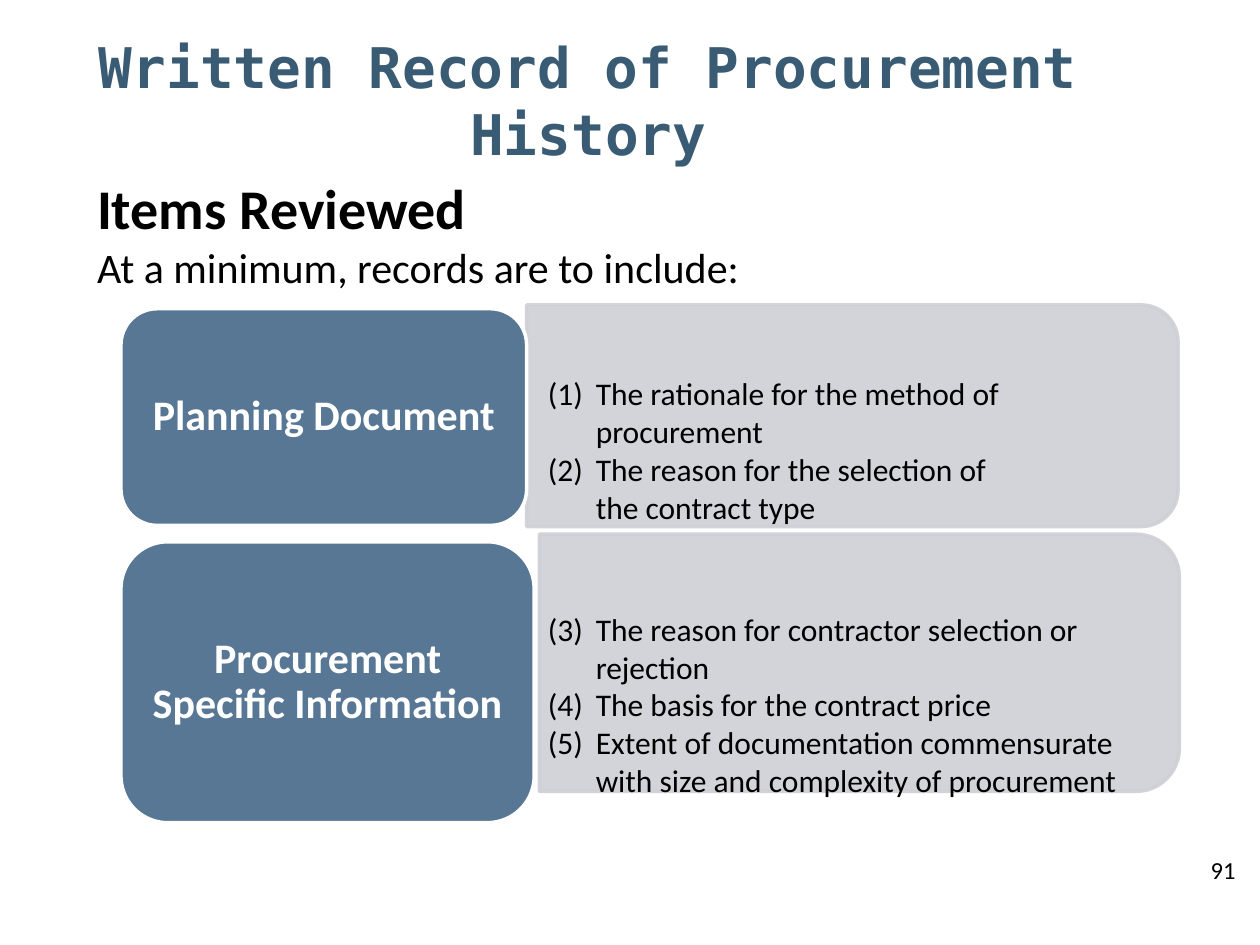
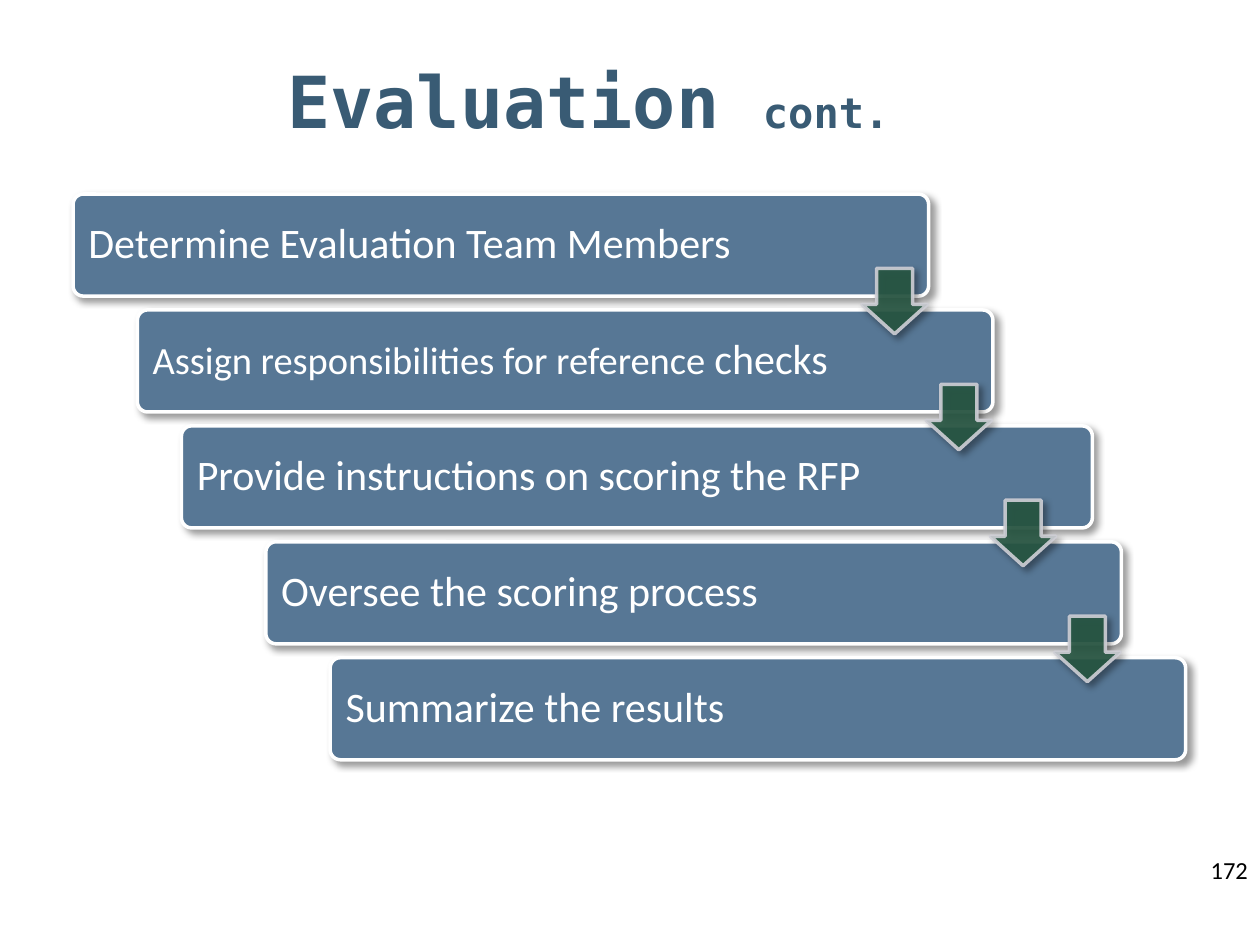
from pptx import Presentation
from pptx.dml.color import RGBColor
from pptx.enum.shapes import MSO_SHAPE as Shape
from pptx.enum.text import MSO_ANCHOR as Anchor, MSO_AUTO_SIZE as AutoSize, PP_ALIGN as Align
from pptx.oxml.ns import qn
from pptx.util import Inches, Pt
from lxml.etree import SubElement

# Colours and fonts
TITLE_BLUE = RGBColor(0x39, 0x5B, 0x74)
BOX_BLUE = RGBColor(0x57, 0x77, 0x95)
PANEL_GREY = RGBColor(0xCF, 0xCF, 0xD6)
ARROW_GREEN = RGBColor(0x27, 0x56, 0x42)
WHITE = RGBColor(0xFF, 0xFF, 0xFF)
BLACK = RGBColor(0, 0, 0)
TITLE_FONT = "DejaVu Sans Mono"
BODY_FONT = "Calibri"

# Layouts of the default template
TITLE_AND_CONTENT, TITLE_ONLY = 1, 5
HANGING = Inches(0.38)


def apply(target, **values):
    for name, value in values.items():
        setattr(target, name, value)


def set_alpha(color_parent, percent):
    color = next(color_parent.iter(qn("a:srgbClr")))
    SubElement(color, qn("a:alpha"), val=str(percent * 1000))


def add_shadow(shape):
    shape.shadow.inherit = False
    effects = shape._element.spPr.find(qn("a:effectLst"))
    outer = SubElement(effects, qn("a:outerShdw"), blurRad=str(Pt(4)), dist=str(Pt(3)),
                       dir=str(45 * 60000), algn="tl", rotWithShape="0")
    color = SubElement(outer, qn("a:srgbClr"), val="000000")
    SubElement(color, qn("a:alpha"), val="40000")


class SlideBuilder:
    def __init__(self, deck):
        self.deck = deck
        self.page = None

    def new_page(self, layout, number, title_spans):
        self.page = self.deck.slides.add_slide(self.deck.slide_layouts[layout])
        title = self.page.shapes.title
        self.place(title, 0.67, 0.25, 8, 1.08)
        self.format_frame(title, vertical_anchor=Anchor.MIDDLE)
        self.add_spans(title.text_frame.paragraphs[0], title_spans,
                       dict(name=TITLE_FONT, bold=True), TITLE_BLUE, alignment=Align.CENTER)
        footer = self.text_box(9.51, 6.74, 0.58, 0.77)
        self.add_spans(footer.text_frame.paragraphs[0], [(number, 14)])

    def place(self, shape, left, top, width, height):
        apply(shape, left=Inches(left), top=Inches(top),
              width=Inches(width), height=Inches(height))

    def format_frame(self, shape, **values):
        apply(shape.text_frame, word_wrap=True, auto_size=AutoSize.NONE, **values)

    def add_spans(self, para, spans, font=None, color=BLACK, **layout):
        """Add (text, size) spans to a paragraph."""
        apply(para, **layout)
        for text, size in spans:
            span = para.add_run()
            span.text = text
            apply(span.font, **{"name": BODY_FONT, "size": Pt(size), **(font or {})})
            span.font.color.rgb = color

    def hang(self, para):
        properties = para._p.get_or_add_pPr()
        for name, value in {"marL": HANGING, "indent": -HANGING}.items():
            properties.set(name, str(value))
        return properties

    def text_box(self, left, top, width, height):
        box = self.page.shapes.add_textbox(*map(Inches, (left, top, width, height)))
        self.format_frame(box)
        return box

    def body(self, lines):
        box = self.page.placeholders[1]
        self.place(box, 0.67, 1.33, 8, 5.33)
        self.format_frame(box)
        frame = box.text_frame
        for index, (text, size, bold) in enumerate(lines):
            para = frame.add_paragraph() if index else frame.paragraphs[0]
            SubElement(self.hang(para), qn("a:buNone"))
            self.add_spans(para, [(text, size)], dict(bold=bold), space_before=Pt(0))

    def numbered_list(self, left, top, width, height, items, start):
        frame = self.text_box(left, top, width, height).text_frame
        for index, text in enumerate(items):
            para = frame.add_paragraph() if index else frame.paragraphs[0]
            SubElement(self.hang(para), qn("a:buAutoNum"),
                       type="arabicParenBoth", startAt=str(start))
            self.add_spans(para, [(text, 18)])

    def shape(self, kind, left, top, width, height, fill, line, adjustments=(), alpha=None):
        shape = self.page.shapes.add_shape(kind, *map(Inches, (left, top, width, height)))
        shape.shadow.inherit = False
        for index, value in enumerate(adjustments):
            shape.adjustments[index] = value
        shape.fill.solid()
        shape.fill.fore_color.rgb = fill
        shape.line.color.rgb = line
        shape.line.width = Pt(2)
        if alpha:
            properties = shape._element.spPr
            set_alpha(properties.find(qn("a:solidFill")), alpha)
            set_alpha(properties.find(qn("a:ln")), alpha)
        return shape

    def label_box(self, left, top, width, height, spans, margin,
                  align=Align.LEFT, bold=False, adjustments=()):
        box = self.shape(Shape.ROUNDED_RECTANGLE, left, top, width, height,
                         BOX_BLUE, WHITE, adjustments)
        self.format_frame(box, vertical_anchor=Anchor.MIDDLE,
                          margin_left=Inches(margin), margin_right=Inches(margin))
        self.add_spans(box.text_frame.paragraphs[0], spans, dict(bold=bold), WHITE,
                       alignment=align, line_spacing=0.9)
        return box

    def side_panel(self, left, top, width, height):
        """Panel rounded on its right side: a quarter turn of a top-rounded shape."""
        panel = self.shape(Shape.ROUND_2_SAME_RECTANGLE,
                           left + (width - height) / 2, top + (height - width) / 2,
                           height, width, PANEL_GREY, PANEL_GREY, alpha=90)
        panel.rotation = 90

    def down_arrow(self, left, top):
        arrow = self.shape(Shape.DOWN_ARROW, left, top, 0.52, 0.52, ARROW_GREEN,
                           PANEL_GREY, (0.55, 0.45), alpha=90)
        add_shadow(arrow)


def build_record_page(builder):
    builder.new_page(TITLE_AND_CONTENT, "91", [("Written Record of Procurement History", 32)])
    builder.body([("Items Reviewed", 32, True),
                  ("At a minimum, records are to include:", 24, False)])

    # Record groups: panel behind, label box in front
    groups = [
        ("Planning Document", (4.18, 2.42, 5.17, 1.76), (0.96, 2.45, 3.22, 1.72)),
        ("Procurement Specific Information", (4.28, 4.24, 5.08, 2.04), (0.96, 4.3, 3.28, 2.23)),
    ]
    for label, panel_area, label_area in groups:
        builder.side_panel(*panel_area)
        builder.label_box(*label_area, [(label, 24)], 0.12, Align.CENTER, bold=True)

    # Numbered records
    builder.numbered_list(4.25, 2.92, 3.92, 1.31, [
        "The rationale for the method of procurement",
        "The reason for the selection of the contract type"], start=1)
    builder.numbered_list(4.25, 4.79, 5.11, 1.62, [
        "The reason for contractor selection or rejection",
        "The basis for the contract price",
        "Extent of documentation commensurate with size and complexity of procurement"], start=3)


def build_evaluation_page(builder):
    builder.new_page(TITLE_ONLY, "172", [("Evaluation ", 41), ("cont.", 24)])
    step_right, step_down = 0.51, 0.92
    steps = [
        [("Determine Evaluation Team Members", 24)],
        [("Assign responsibilities for reference ", 22), ("checks", 24)],
        [("Provide instructions on scoring the RFP", 24)],
        [("Oversee the scoring process", 24)],
        [("Summarize the results", 24)],
    ]
    wide_step = 2

    # Staircase of steps
    for index, spans in enumerate(steps):
        left, width = 0.58 + index * step_right, 6.79
        if index == wide_step:
            left, width = 1.44, 7.23
        box = builder.label_box(left, 1.54 + index * step_down, width, 0.81, spans, 0.1,
                                adjustments=(0.1,))
        add_shadow(box)

    # Arrows between steps
    for index in range(len(steps) - 1):
        builder.down_arrow(6.84 + index * step_right, 2.13 + index * step_down)


def main():
    deck = Presentation()
    apply(deck, slide_width=Inches(10), slide_height=Inches(7.5))
    builder = SlideBuilder(deck)
    build_record_page(builder)
    build_evaluation_page(builder)
    deck.save("out.pptx")


if __name__ == "__main__":
    main()
